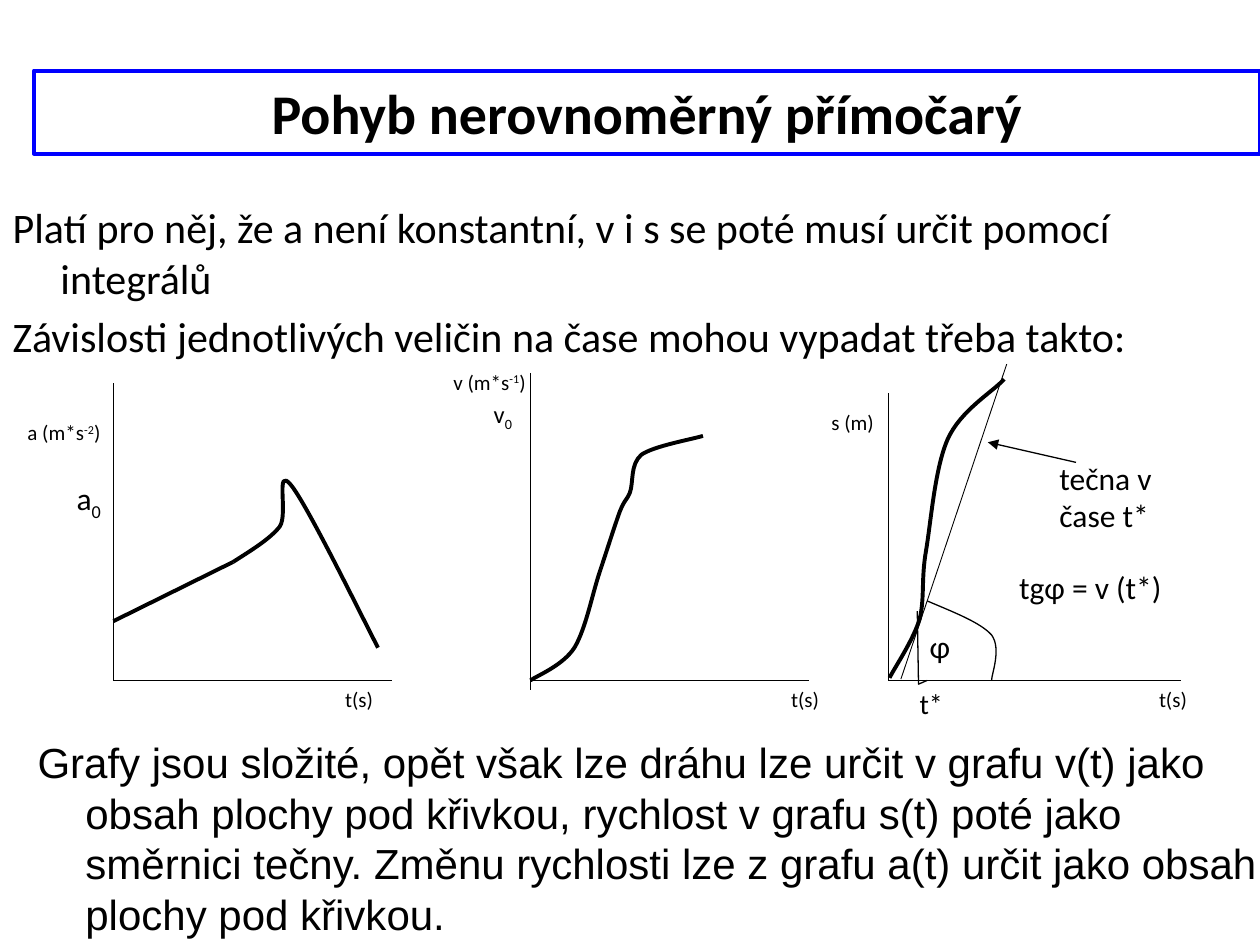
"""Build the slide on non-uniform straight-line motion with its three graphs."""
from dataclasses import dataclass

from lxml.etree import SubElement
from pptx import Presentation
from pptx.dml.color import RGBColor
from pptx.enum.shapes import MSO_CONNECTOR as Connector
from pptx.enum.text import MSO_ANCHOR as Anchor, MSO_AUTO_SIZE as AutoSize, PP_ALIGN as Align
from pptx.oxml.ns import qn
from pptx.util import Pt

EMU_PER_PX = 9144
COLORS = {"ink": "000000", "frame": "0000FF"}
SUPERSCRIPT, SUBSCRIPT = 30000, -25000
Point = tuple[int, int]


@dataclass
class Label:
    box: tuple[int, int, int, int]
    text: str
    size: int
    shifted: str = ""
    baseline: int = 0
    ending: str = ""


@dataclass
class Line:
    start: Point
    end: Point
    width: float = 0.75
    arrow: bool = False


@dataclass
class Outline:
    points: list[Point]
    width: float = 2.25
    curved: bool = True


LINES = [
    Line((90, 304), (90, 540)),
    Line((90, 540), (311, 540)),
    Line((421, 296), (421, 548)),
    Line((421, 540), (642, 540)),
    Line((705, 312), (705, 540)),
    Line((705, 540), (937, 540)),
    Line((90, 493), (185, 446), 2.25),
    Line((715, 539), (799, 289), 0.5),
    Line((854, 367), (784, 351), arrow=True),
]
OUTLINES = [
    Outline([(185, 446), (199, 437), (214, 428), (222, 418), (229, 408), (218, 369), (231, 385),
             (244, 401), (286, 487), (300, 514)]),
    Outline([(421, 540), (427, 536), (447, 528), (456, 514), (465, 499), (470, 472), (476, 454),
             (482, 436), (488, 417), (492, 406), (496, 396), (497, 398), (500, 391),
             (503, 383), (500, 369), (509, 361), (519, 354), (548, 349), (558, 346)]),
    Outline([(706, 538), (710, 530), (725, 508), (730, 491), (734, 474), (731, 460), (735, 437),
             (739, 413), (742, 372), (752, 349), (762, 326), (788, 311), (797, 301)]),
    Outline([(736, 477), (757, 486), (778, 494), (787, 504), (795, 515), (787, 535), (787, 540)], 0.75),
    Outline([(728, 485), (729, 543), (736, 540)], 0.75, curved=False),
]
LABELS = [
    Label((12, 328, 90, 30), "a (m*s", 12, "-2", SUPERSCRIPT, ")"),
    Label((350, 288, 90, 30), "v (m*s", 12, "-1", SUPERSCRIPT, ")"),
    Label((650, 320, 90, 30), "s (m)", 12),
    Label((264, 540, 79, 30), "t(s)", 12),
    Label((618, 540, 71, 30), "t(s)", 12),
    Label((910, 540, 71, 30), "t(s)", 12),
    Label((51, 375, 55, 40), "a", 18, "0", SUBSCRIPT),
    Label((382, 312, 55, 33), "v", 14, "0", SUBSCRIPT),
    Label((728, 493, 32, 40), "φ", 18),
    Label((799, 446, 173, 40), "tgφ = v (t*)", 18),
    Label((831, 359, 118, 70), "tečna v čase t*", 18),
    Label((720, 540, 47, 37), "t*", 16),
]
INTRO = [
    "Platí pro něj, že a není konstantní, v i s se poté musí určit pomocí integrálů",
    "Závislosti jednotlivých veličin na čase mohou vypadat třeba takto:",
]
SUMMARY = (
    "Grafy jsou složité, opět však lze dráhu lze určit v grafu v(t) jako obsah plochy pod křivkou, "
    "rychlost v grafu s(t) poté jako směrnici tečny. Změnu rychlosti lze z grafu a(t) určit jako "
    "obsah plochy pod křivkou."
)


def px(value: int) -> int:
    return value * EMU_PER_PX


def color(name: str) -> RGBColor:
    return RGBColor.from_string(COLORS[name])


def set_font(paragraph, size: int, name: str = "Calibri", bold: bool = False) -> None:
    font = paragraph.font
    font.size, font.name, font.bold = Pt(size), name, bold
    font.color.rgb = color("ink")


def set_line(shape, width: float, name: str = "ink") -> None:
    shape.line.color.rgb = color(name)
    shape.line.width = Pt(width)


def place(shape, box: tuple[int, int, int, int]) -> None:
    shape.left, shape.top, shape.width, shape.height = map(px, box)


def set_hanging_indent(paragraph) -> None:
    properties = paragraph._p.get_or_add_pPr()
    properties.set("marL", str(px(38)))
    properties.set("indent", str(px(-38)))
    SubElement(properties, qn("a:buNone"))


def draw_title(slide) -> None:
    title = slide.shapes.title
    place(title, (27, 56, 973, 66))
    set_line(title, 2.25, "frame")
    frame = title.text_frame
    frame.text = "Pohyb nerovnoměrný přímočarý"
    frame.auto_size = AutoSize.NONE
    frame.vertical_anchor = Anchor.MIDDLE
    frame.paragraphs[0].alignment = Align.CENTER
    set_font(frame.paragraphs[0], 32, bold=True)


def draw_body(slide) -> None:
    body = slide.placeholders[1]
    place(body, (0, 155, 1000, 583))
    frame = body.text_frame
    frame.text = "\n".join(INTRO)
    frame.auto_size = AutoSize.NONE
    for paragraph in frame.paragraphs:
        set_hanging_indent(paragraph)
        set_font(paragraph, 24)


def draw_summary(slide) -> None:
    frame = slide.shapes.add_textbox(*map(px, (20, 580, 1000, 170))).text_frame
    frame.word_wrap = True
    frame.text = SUMMARY
    set_hanging_indent(frame.paragraphs[0])
    set_font(frame.paragraphs[0], 24, "Arial")


def draw_label(slide, label: Label) -> None:
    frame = slide.shapes.add_textbox(*map(px, label.box)).text_frame
    frame.word_wrap = True
    paragraph = frame.paragraphs[0]
    set_font(paragraph, label.size)
    for text, baseline in ((label.text, 0), (label.shifted, label.baseline), (label.ending, 0)):
        if text:
            run = paragraph.add_run()
            run.text = text
            if baseline:
                run._r.get_or_add_rPr().set("baseline", str(baseline))


def draw_line(slide, line: Line) -> None:
    connector = slide.shapes.add_connector(Connector.STRAIGHT, *map(px, line.start + line.end))
    set_line(connector, line.width)
    if line.arrow:
        SubElement(connector.line._get_or_add_ln(), qn("a:tailEnd"), type="triangle")
    SubElement(connector._element.spPr, qn("a:effectLst"))


def draw_outline(slide, outline: Outline) -> None:
    builder = slide.shapes.build_freeform(*outline.points[0], scale=EMU_PER_PX)
    builder.add_line_segments(outline.points[1:], close=False)
    shape = builder.convert_to_shape()
    shape.fill.background()
    set_line(shape, outline.width)
    shape.shadow.inherit = False
    if outline.curved:
        bend_segments(shape)


def bend_segments(shape) -> None:
    """Turn each three straight segments into one cubic curve."""
    outline_path = next(shape._element.iter(qn("a:path")))
    segments = outline_path.findall(qn("a:lnTo"))
    for first in range(0, len(segments), 3):
        curve = SubElement(outline_path, qn("a:cubicBezTo"))
        for segment in segments[first:first + 3]:
            curve.append(segment[0])
            outline_path.remove(segment)


def main() -> None:
    presentation = Presentation()
    presentation.slide_width, presentation.slide_height = px(1000), px(750)
    slide = presentation.slides.add_slide(presentation.slide_layouts[1])
    draw_title(slide)
    draw_body(slide)
    draw_summary(slide)
    for line in LINES:
        draw_line(slide, line)
    for outline in OUTLINES:
        draw_outline(slide, outline)
    for label in LABELS:
        draw_label(slide, label)
    presentation.save("out.pptx")


if __name__ == "__main__":
    main()
